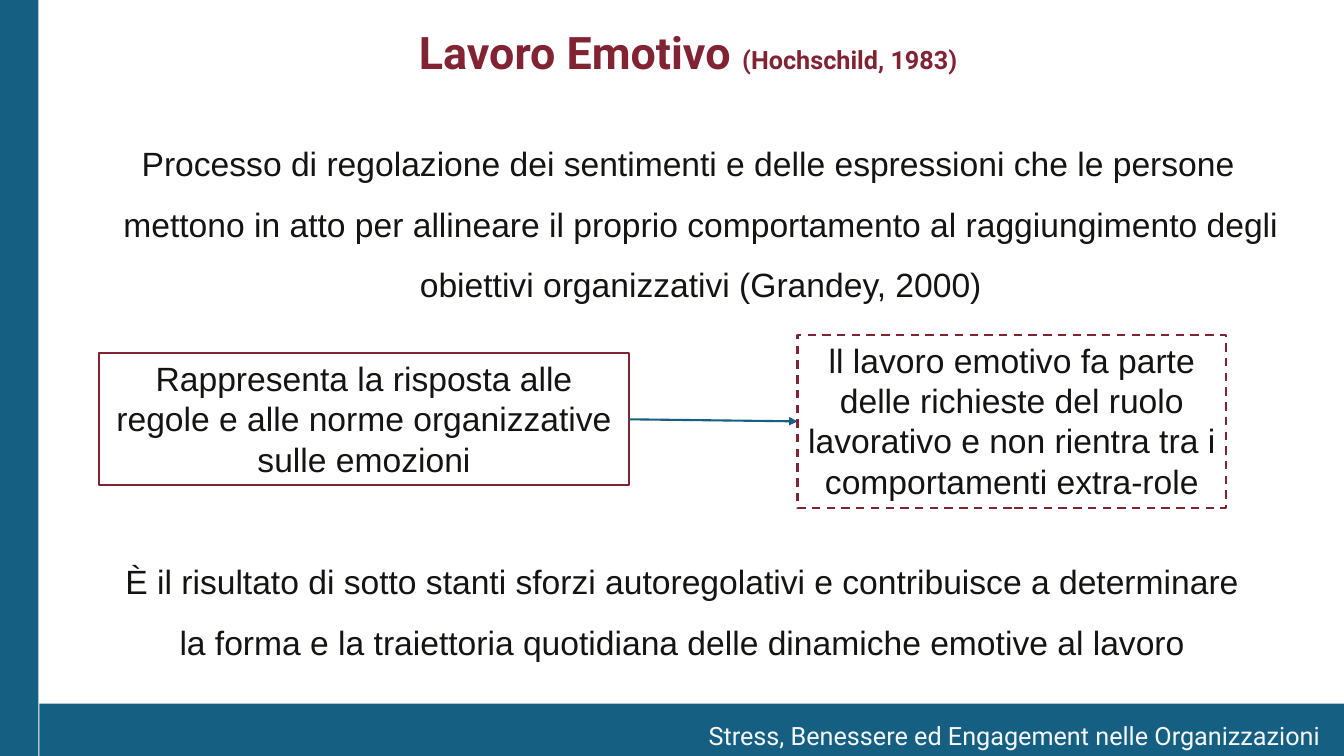
import pptx
import pptx.util
import pptx.dml.color
import pptx.enum.dml
import pptx.enum.shapes
import pptx.enum.text
import pptx.oxml

Inches, Pt = pptx.util.Inches, pptx.util.Pt
ALIGN, ANCHOR = pptx.enum.text.PP_ALIGN, pptx.enum.text.MSO_ANCHOR
COLORS = {"blue": "156082", "wine": "822334", "ink": "141413", "pale": "F6F6F6"}


def rgb(name):
    return pptx.dml.color.RGBColor.from_string(COLORS[name])


class Deck:
    """Holds the style and the current slide."""
    head_font, body_font, body_size = "Roboto", "Arial", 24

    def __init__(self):
        self.prs = pptx.Presentation()
        self.prs.slide_width, self.prs.slide_height = Inches(13.33), Inches(7.5)
        self.s = self.prs.slides.add_slide(self.prs.slide_layouts[5])

    def style(self, target, font, size, color, bold=False):
        target.font.name, target.font.size = font, Pt(size)
        target.font.bold = bold
        target.font.color.rgb = rgb(color)

    def title(self, box, parts):
        sp = self.s.shapes.title
        sp.left, sp.top, sp.width, sp.height = map(Inches, box)
        tf = sp.text_frame
        tf.word_wrap = True
        tf.auto_size = pptx.enum.text.MSO_AUTO_SIZE.NONE
        tf.vertical_anchor = ANCHOR.MIDDLE
        tf.margin_bottom = Inches(0.6)
        p = tf.paragraphs[0]
        p.alignment, p.line_spacing = ALIGN.CENTER, 0.9
        for text, size in parts:
            r = p.add_run()
            r.text = text
            self.style(r, self.head_font, size, "wine", True)

    def rect(self, box, fill=None, line=None, dash=None):
        sp = self.s.shapes.add_shape(
            pptx.enum.shapes.MSO_SHAPE.RECTANGLE, *map(Inches, box))
        sp.shadow.inherit = False
        if fill:
            sp.fill.solid()
            sp.fill.fore_color.rgb = rgb(fill)
        else:
            sp.fill.background()
        if line:
            sp.line.color.rgb, sp.line.width = rgb(line), Pt(1.5)
            sp.line.dash_style = dash
        else:
            sp.line.fill.background()
        return sp

    def label(self, sp, text, spacing=None, indent=0):
        tf = sp.text_frame
        tf.word_wrap, tf.vertical_anchor = True, ANCHOR.TOP
        p = tf.paragraphs[0]
        p.text, p.alignment, p.line_spacing = text, ALIGN.CENTER, spacing
        if indent:
            pPr = p._p.get_or_add_pPr()
            pPr.set("marL", str(Inches(indent)))
            pPr.set("indent", str(-Inches(indent)))
        self.style(p, self.body_font, self.body_size, "ink")
        return p

    def text(self, box, text, spacing=None, indent=0):
        sp = self.s.shapes.add_textbox(*map(Inches, box))
        return self.label(sp, text, spacing, indent)

    def arrow(self, start, end):
        cx = self.s.shapes.add_connector(
            pptx.enum.shapes.MSO_CONNECTOR.STRAIGHT,
            *map(Inches, start + end))
        cx.line.color.rgb, cx.line.width = rgb("blue"), Pt(1.5)
        tail = pptx.oxml.parse_xml(
            '<a:tailEnd xmlns:a="http://schemas.openxmlformats.org/'
            'drawingml/2006/main" type="triangle"/>')
        cx.line._get_or_add_ln().append(tail)
        effects = pptx.oxml.parse_xml(
            '<a:effectLst xmlns:a="http://schemas.openxmlformats.org/'
            'drawingml/2006/main"/>')
        cx._element.spPr.append(effects)


def main():
    deck = Deck()

    # Side bar, footer bar and course name
    deck.rect((0, 0, 0.38, 7.5), fill="blue")
    deck.rect((0.39, 6.98, 12.94, 0.52), fill="blue")
    course = deck.text((6.93, 7.1, 6.4, 0.4),
                       "Stress, Benessere ed Engagement nelle Organizzazioni")
    course.alignment = ALIGN.LEFT
    deck.style(course, deck.head_font, 18, "pale")

    # Title and definition
    deck.title((2.16, 0.1, 9.33, 1.45),
               [("Lavoro Emotivo ", 32), ("(Hochschild, 1983)", 18)])
    deck.text((0.81, 1.17, 12.03, 3.01),
              "Processo di regolazione dei sentimenti e delle espressioni che le "
              "persone mettono in atto per allineare il proprio comportamento al "
              "raggiungimento degli obiettivi organizzativi (Grandey, 2000)",
              spacing=1.5, indent=0.25)

    # Two linked boxes
    response = deck.rect((0.98, 3.5, 5.26, 1.31), line="wine")
    deck.label(response, "Rappresenta la risposta alle regole e alle norme "
                         "organizzative sulle emozioni")
    deck.arrow((6.24, 4.16), (7.91, 4.18))
    role = deck.rect((7.91, 3.32, 4.25, 1.72), line="wine",
                     dash=pptx.enum.dml.MSO_LINE.DASH)
    deck.label(role, "ll lavoro emotivo fa parte delle richieste del ruolo "
                     "lavorativo e non rientra tra i comportamenti extra-role")

    # Conclusion
    deck.text((0.98, 5.32, 11.57, 1.25),
              "È il risultato di sotto stanti sforzi autoregolativi e contribuisce "
              "a determinare la forma e la traiettoria quotidiana delle dinamiche "
              "emotive al lavoro", spacing=1.5)

    deck.prs.save("out.pptx")


if __name__ == "__main__":
    main()
